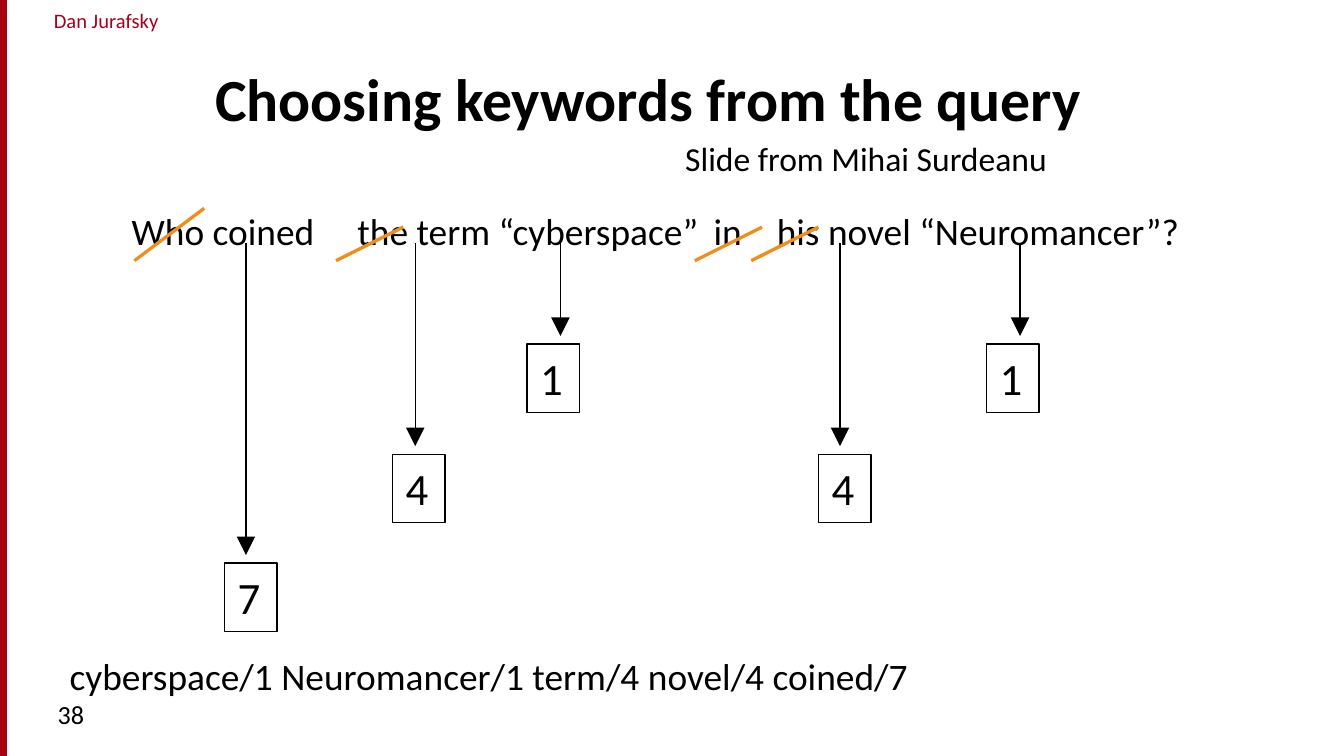
"""Build a slide that ranks the keywords of a question."""
from dataclasses import dataclass

from lxml.etree import SubElement
from pptx import Presentation
from pptx.dml.color import RGBColor
from pptx.enum.shapes import MSO_CONNECTOR, MSO_SHAPE
from pptx.enum.text import MSO_ANCHOR, MSO_AUTO_SIZE, PP_ALIGN
from pptx.oxml.ns import qn
from pptx.shapes.connector import Connector
from pptx.slide import Slide
from pptx.text.text import TextFrame
from pptx.util import Inches, Pt

COLORS = {"text": "000000", "author": "A4001D", "bar": "A40508", "strike": "EF8E1C"}
FONT = "Calibri"
SLIDE_WIDTH = 10
SLIDE_HEIGHT = SLIDE_WIDTH * 9 / 16
ARROW_TOP = 1.81
STRIKE_BOTTOM = 1.94
BOX_WIDTH, BOX_HEIGHT = 0.39, 0.51
BOX_GAP = 0.06


@dataclass(frozen=True)
class Keyword:
    """A ranked word: its arrow position, box position and rank."""

    arrow_x: float
    box_left: float
    box_top: float
    rank: str


@dataclass(frozen=True)
class Strike:
    """A line crossing out a stop word."""

    left: float
    width: float = 0.5
    height: float = 0.25


KEYWORDS = [
    Keyword(4.17, 3.92, 2.56, "1"),
    Keyword(7.59, 7.34, 2.56, "1"),
    Keyword(3.09, 2.92, 3.38, "4"),
    Keyword(6.25, 6.09, 3.38, "4"),
    Keyword(1.83, 1.67, 4.19, "7"),
]
STRIKES = [Strike(1, 0.52, 0.39), Strike(2.5), Strike(5.17), Strike(5.59)]
QUESTION = ["Who coined", "the term “cyberspace”", "in", "his novel “Neuromancer”?"]
QUESTION_TABS = [1.68, 4.33, 4.8]


def color(name: str) -> RGBColor:
    """Return a named colour."""
    return RGBColor.from_string(COLORS[name])


def write(frame: TextFrame, text: str, *, size: float, ink: str = "text",
          bold: bool = False, align: PP_ALIGN = PP_ALIGN.LEFT,
          anchor: MSO_ANCHOR = MSO_ANCHOR.TOP, inset: float = 0.1) -> None:
    """Fill a text frame with one formatted paragraph."""
    frame.word_wrap = True
    frame.auto_size = MSO_AUTO_SIZE.NONE
    frame.vertical_anchor = anchor
    frame.margin_left = frame.margin_right = Inches(inset)
    frame.margin_top = frame.margin_bottom = Inches(0.05)
    para = frame.paragraphs[0]
    para.alignment = align
    span = para.add_run()
    span.text = text
    span.font.name = FONT
    span.font.size = Pt(size)
    span.font.bold = bold
    span.font.color.rgb = color(ink)


def add_text(page: Slide, text: str, left: float, top: float, width: float,
             height: float, **style) -> TextFrame:
    """Add a text box and return its frame."""
    box = page.shapes.add_textbox(Inches(left), Inches(top), Inches(width), Inches(height))
    write(box.text_frame, text, **style)
    return box.text_frame


def add_line(page: Slide, start: tuple[float, float], end: tuple[float, float],
             ink: str, weight: float) -> Connector:
    """Add a straight line without a shadow."""
    line = page.shapes.add_connector(
        MSO_CONNECTOR.STRAIGHT, *map(Inches, start), *map(Inches, end))
    line.line.color.rgb = color(ink)
    line.line.width = Pt(weight)
    SubElement(line._element.spPr, qn("a:effectLst"))
    return line


def add_keyword(page: Slide, keyword: Keyword) -> None:
    """Draw the arrow and the rank box of a keyword."""
    arrow = add_line(page, (keyword.arrow_x, ARROW_TOP),
                     (keyword.arrow_x, keyword.box_top - BOX_GAP), "text", 0.75)
    SubElement(arrow._element.spPr.get_or_add_ln(), qn("a:tailEnd"),
               type="triangle", w="lg", len="lg")
    box = page.shapes.add_shape(
        MSO_SHAPE.RECTANGLE, Inches(keyword.box_left), Inches(keyword.box_top),
        Inches(BOX_WIDTH), Inches(BOX_HEIGHT))
    box.shadow.inherit = False
    box.fill.background()
    box.line.color.rgb = color("text")
    box.line.width = Pt(0.75)
    write(box.text_frame, keyword.rank, size=24)


def add_question(page: Slide) -> None:
    """Write the question with tab stops between its parts."""
    frame = add_text(page, "\t".join(QUESTION), 0.75, 1.5, 8.47, 0.44, size=20)
    frame.margin_left = Inches(0.23)
    stops = SubElement(frame.paragraphs[0]._p.get_or_add_pPr(), qn("a:tabLst"))
    for position in QUESTION_TABS:
        SubElement(stops, qn("a:tab"), pos=str(Inches(position)), algn="l")


def add_bar(page: Slide) -> None:
    """Draw the red bar on the left edge."""
    bar = page.shapes.add_shape(
        MSO_SHAPE.RECTANGLE, 0, 0, Inches(0.05), Inches(SLIDE_HEIGHT))
    bar.shadow.inherit = False
    bar.fill.solid()
    bar.fill.fore_color.rgb = color("bar")
    bar.line.color.rgb = color("author")
    bar.line.width = Pt(0.75)


def main() -> None:
    """Build and save the deck."""
    deck = Presentation()
    deck.slide_width, deck.slide_height = Inches(SLIDE_WIDTH), Inches(SLIDE_HEIGHT)
    page = deck.slides.add_slide(deck.slide_layouts[5])
    title = page.shapes.title
    title.left, title.top = Inches(1.5), Inches(0.23)
    title.width, title.height = Inches(8.17), Inches(0.81)
    write(title.text_frame, "Choosing keywords from the query", size=32, bold=True,
          anchor=MSO_ANCHOR.BOTTOM)
    add_text(page, "Dan Jurafsky", 0.08, 0.01, 1.42, 0.29, size=11, ink="author",
             align=PP_ALIGN.CENTER, inset=0)
    add_bar(page)
    add_text(page, "38", 0.33, 5.15, 2.17, 0.37, size=14)
    add_question(page)
    for strike in STRIKES:
        add_line(page, (strike.left, STRIKE_BOTTOM),
                 (strike.left + strike.width, STRIKE_BOTTOM - strike.height), "strike", 1.75)
    for keyword in KEYWORDS:
        add_keyword(page, keyword)
    add_text(page, "cyberspace/1 Neuromancer/1 term/4 novel/4 coined/7",
             0.42, 4.81, 6.87, 0.44, size=20)
    add_text(page, "Slide from Mihai Surdeanu", 5, 0.98, 2.93, 0.4, size=18)
    deck.save("out.pptx")


if __name__ == "__main__":
    main()
